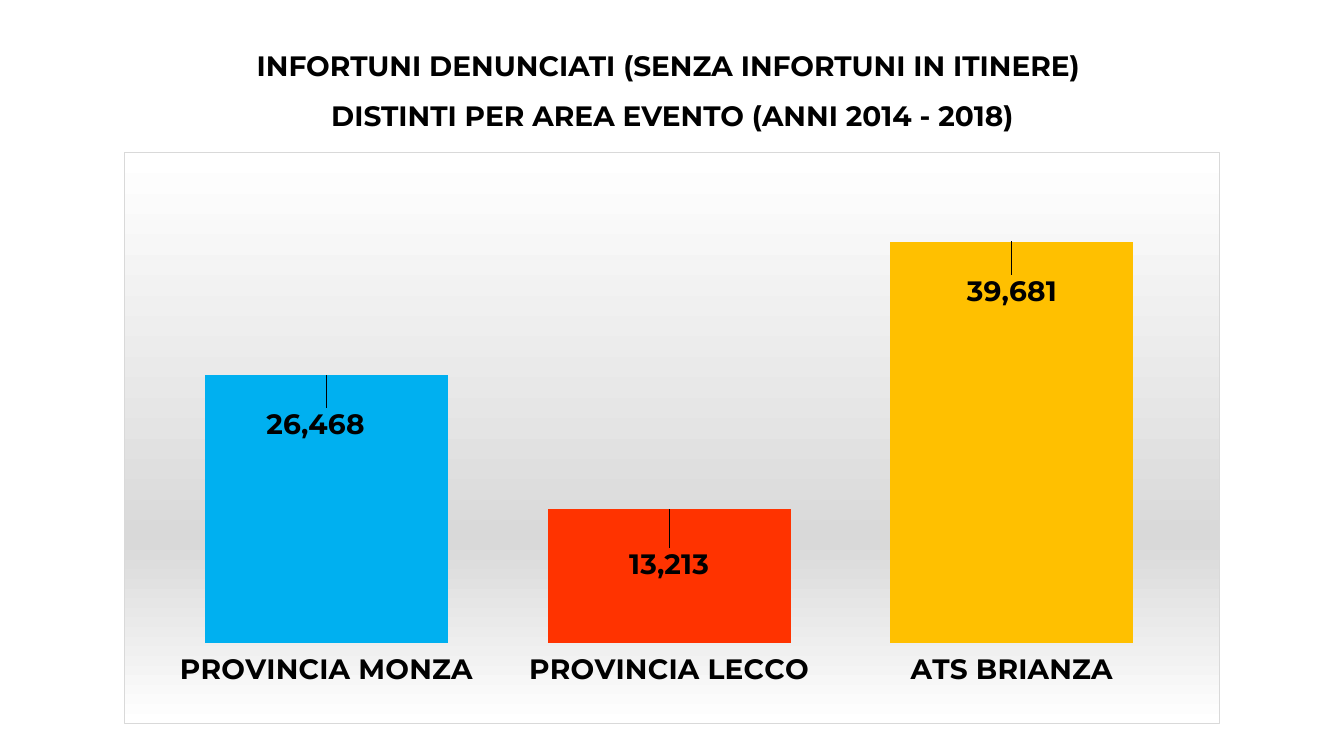
from pptx import Presentation
from pptx.chart.data import CategoryChartData
from pptx.dml.color import RGBColor
from pptx.enum.chart import XL_CHART_TYPE as ChartType, XL_LABEL_POSITION as LabelPos
from pptx.enum.chart import XL_TICK_LABEL_POSITION as TickPos, XL_TICK_MARK as TickMark
from pptx.enum.text import MSO_ANCHOR, MSO_AUTO_SIZE, PP_ALIGN
from pptx.oxml import parse_xml
from pptx.oxml.ns import nsdecls
from pptx.util import Inches, Pt

TITLE = [
    "INFORTUNI DENUNCIATI (SENZA INFORTUNI IN ITINERE) ",
    "DISTINTI PER AREA EVENTO (ANNI 2014 - 2018)",
]
# area, accidents, bar colour, label shift as a share of the chart (x, y)
AREAS = [
    ("PROVINCIA MONZA", 26468, "00B0F0", (-0.01, 0.05)),
    ("PROVINCIA LECCO", 13213, "FF3300", (0, 0.06)),
    ("ATS BRIANZA", 39681, "FFC000", (0, 0.05)),
]
BACKDROP = [(0, "FFFFFF"), (68, "D9D9D9"), (100, "FFFFFF")]
BORDER = "D9D9D9"
PLOT = {"x": 0.028, "y": 0.062, "w": 0.939, "h": 0.797}
NUMBER = "#,##0"


def rgb(color):
    return RGBColor.from_string(color)


def style(font):
    font.name = "Montserrat"
    font.size = Pt(20)
    font.bold = True
    font.color.rgb = rgb("000000")


def layout_xml(places, head=""):
    values = "".join(f'<c:{k} val="{v}"/>' for k, v in places.items())
    return parse_xml(f'<c:layout {nsdecls("c")}><c:manualLayout>{head}{values}'
                     '</c:manualLayout></c:layout>')


prs = Presentation()
prs.slide_width, prs.slide_height = Inches(13.33), Inches(7.5)
s = prs.slides.add_slide(prs.slide_layouts[5])

# Title
title = s.shapes.title
title.left, title.top = Inches(0.92), Inches(0.26)
title.width, title.height = Inches(11.5), Inches(0.71)
tf = title.text_frame
tf.text = "\n".join(TITLE)
tf.word_wrap = True
tf.auto_size = MSO_AUTO_SIZE.NONE
tf.vertical_anchor = MSO_ANCHOR.TOP
for p in tf.paragraphs:
    p.alignment = PP_ALIGN.CENTER
    p.line_spacing = 1.5
    p.space_before = Pt(0)
    style(p.runs[0].font)

# Column chart
data = CategoryChartData(number_format=NUMBER)
data.categories = [area for area, *_ in AREAS]
data.add_series("Series 1", [count for _, count, *_ in AREAS])
chart = s.shapes.add_chart(ChartType.COLUMN_CLUSTERED, Inches(1.23), Inches(1.51),
                           Inches(10.87), Inches(5.67), data).chart
chart.has_legend = False
chart.has_title = False
chart.font.name = "Calibri"
chart.font.size = Pt(10)
chart.font.color.rgb = rgb("000000")

# Axes
cat = chart.category_axis
cat.major_tick_mark = TickMark.NONE
cat.tick_label_position = TickPos.LOW
cat.format.line.fill.background()
style(cat.tick_labels.font)
val = chart.value_axis
val.minimum_scale, val.maximum_scale = 0, 45000
val.has_major_gridlines = False
val.tick_labels.number_format = NUMBER
val.tick_labels.number_format_is_linked = False
val.visible = False

# Bars and their labels
plot = chart.plots[0]
plot.gap_width = 41
plot.vary_by_categories = False
series = plot.series[0]
series.format.fill.solid()
series.format.fill.fore_color.rgb = rgb(AREAS[0][2])
labels = series.data_labels
labels.show_value = True
labels.position = LabelPos.INSIDE_END
labels.number_format = NUMBER
labels.number_format_is_linked = False
style(labels.font)
for i, (_, _, color, (dx, dy)) in enumerate(AREAS):
    point = series.points[i]
    point.format.fill.solid()
    point.format.fill.fore_color.rgb = rgb(color)
    point.data_label.position = LabelPos.INSIDE_END
    style(point.data_label.font)
    idx = series.data_labels._element.xpath(f'c:dLbl/c:idx[@val="{i}"]')[0]
    idx.addnext(layout_xml({"x": dx, "y": dy}))

# Plot position
area = chart.element.xpath("c:chart/c:plotArea")[0]
for old in area.xpath("c:layout"):
    area.remove(old)
area.insert(0, layout_xml(PLOT, '<c:layoutTarget val="inner"/><c:xMode val="edge"/>'
                                '<c:yMode val="edge"/>'))

# Gradient backdrop and border
stops = "".join(f'<a:gs pos="{pos * 1000}"><a:srgbClr val="{color}"/></a:gs>'
                for pos, color in BACKDROP)
chart.element.xpath("c:chart")[0].addnext(parse_xml(
    f'<c:spPr {nsdecls("c", "a")}><a:gradFill><a:gsLst>{stops}</a:gsLst>'
    f'<a:lin ang="5400000" scaled="0"/></a:gradFill><a:ln w="{Pt(0.75)}"><a:solidFill>'
    f'<a:srgbClr val="{BORDER}"/></a:solidFill></a:ln></c:spPr>'))

prs.save("out.pptx")
